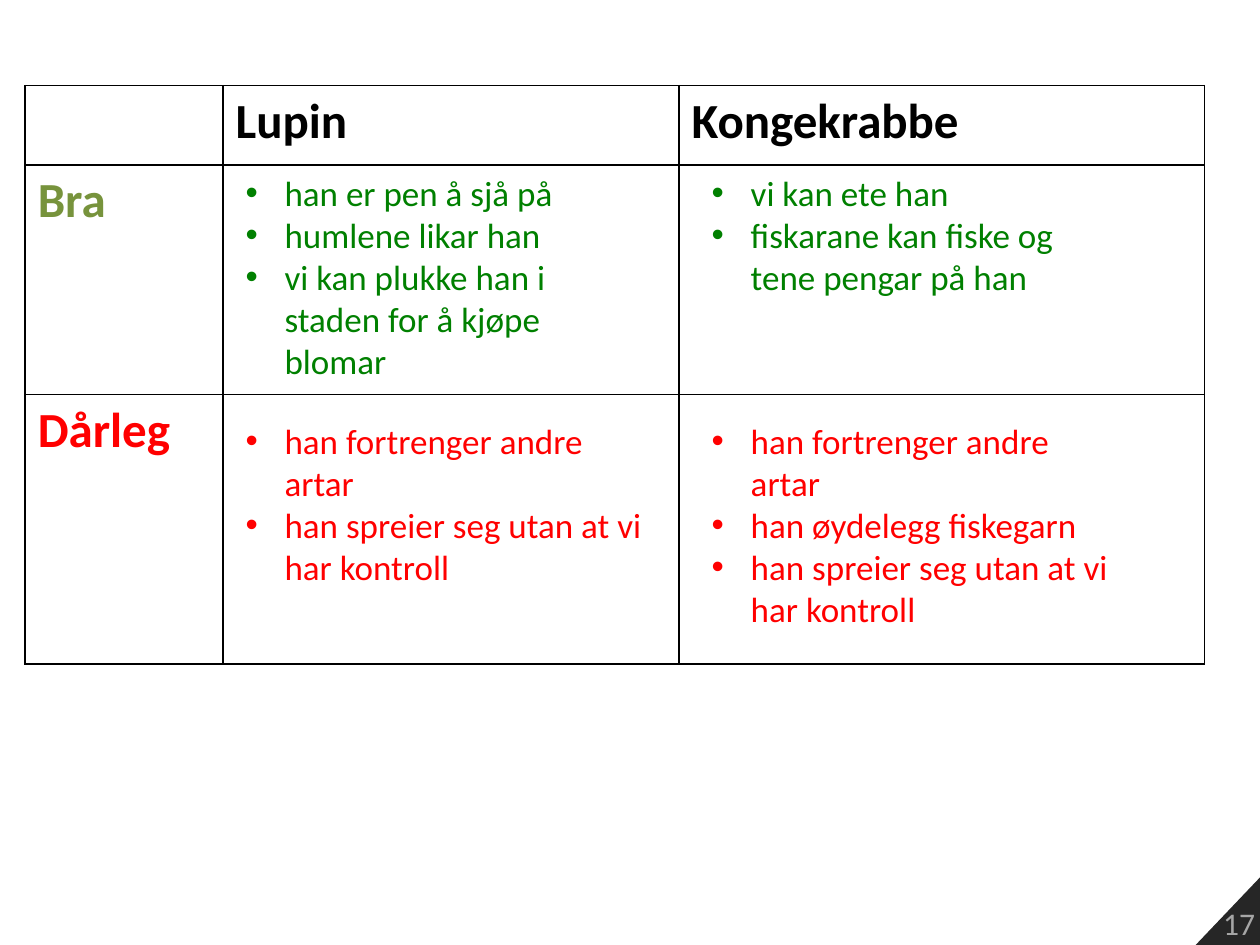
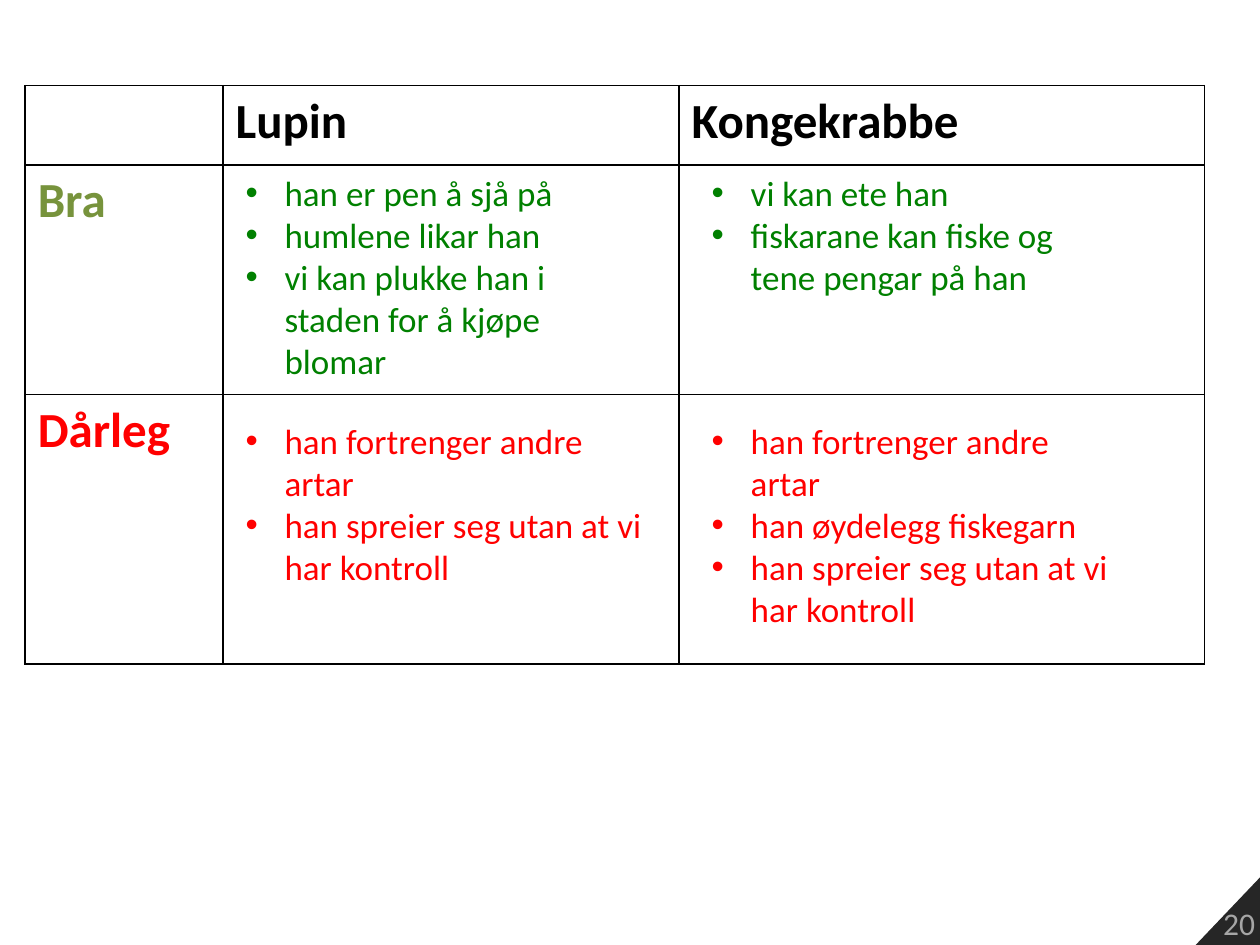
"""Build two slides that weigh the good and bad sides of lupins and king crabs."""
from dataclasses import dataclass

from lxml import etree
from pptx import Presentation
from pptx import util as u
from pptx.dml import color
from pptx.enum import text
from pptx.oxml import ns

FONT = "Calibri"
COLORS = {
    "ink": "000000",
    "bra": "77933C",
    "good": "008000",
    "bad": "FF0000",
    "corner": "262626",
    "number": "A6A6A6",
}
COLUMN_WIDTHS = (1.57, 3.62, 4.17)
ROW_HEIGHTS = (0.63, 1.82, 2.14)
LUPIN_LEFT, KRABBE_LEFT = 1.85, 5.55
BRA_TOP, DARLEG_TOP = 1.31, 3.28
ARGUMENT_WIDTH = 3.39
INDENT = 0.31
PAGE_NUMBERS = ("17", "20")


@dataclass(frozen=True)
class Heading:
    row: int
    column: int
    label: str
    ink: str


@dataclass(frozen=True)
class Arguments:
    left: float
    top: float
    height: float
    ink: str
    points: tuple[str, ...]


HEADINGS = (
    Heading(0, 1, "Lupin", "ink"),
    Heading(0, 2, "Kongekrabbe", "ink"),
    Heading(1, 0, "Bra", "bra"),
    Heading(2, 0, "Dårleg", "bad"),
)
DISPLACES = "han fortrenger andre artar"
SPREADS = "han spreier seg utan at vi har kontroll"
ARGUMENTS = (
    Arguments(LUPIN_LEFT, BRA_TOP, 1.78, "good", (
        "han er pen å sjå på",
        "humlene likar han",
        "vi kan plukke han i staden for å kjøpe blomar",
    )),
    Arguments(KRABBE_LEFT, BRA_TOP, 1.11, "good", (
        "vi kan ete han",
        "fiskarane kan fiske og tene pengar på han",
    )),
    Arguments(LUPIN_LEFT, DARLEG_TOP, 1.45, "bad", (DISPLACES, SPREADS)),
    Arguments(KRABBE_LEFT, DARLEG_TOP, 1.78, "bad",
              (DISPLACES, "han øydelegg fiskegarn", SPREADS)),
)


def rgb(name: str) -> color.RGBColor:
    return color.RGBColor.from_string(COLORS[name])


def add_run(paragraph, wording: str, size: int, ink: str, bold: bool = False) -> None:
    run = paragraph.add_run()
    run.text = wording
    run.font.name = FONT
    run.font.size = u.Pt(size)
    run.font.bold = bold
    run.font.color.rgb = rgb(ink)


def add_bullet(paragraph) -> None:
    properties = paragraph._p.get_or_add_pPr()
    properties.set("marL", str(u.Inches(INDENT)))
    properties.set("indent", str(u.Inches(-INDENT)))
    etree.SubElement(properties, ns.qn("a:buFont"), typeface="Arial")
    etree.SubElement(properties, ns.qn("a:buChar"), char="•")


def add_borders(cell) -> None:
    properties = cell._tc.get_or_add_tcPr()
    for position, side in enumerate(("lnL", "lnR", "lnT", "lnB")):
        border = etree.Element(ns.qn(f"a:{side}"), w=str(u.Pt(1)))
        fill = etree.SubElement(border, ns.qn("a:solidFill"))
        etree.SubElement(fill, ns.qn("a:srgbClr"), val=COLORS["ink"])
        properties.insert(position, border)


def draw_corner(slide, number: str) -> None:
    left, top, right, bottom = map(u.Inches, (9.47, 6.9, 10.06, 7.52))
    builder = slide.shapes.build_freeform(left, bottom)
    builder.add_line_segments([(right, top), (right, bottom)], close=True)
    corner = builder.convert_to_shape()
    corner.shadow.inherit = False
    corner.fill.solid()
    corner.fill.fore_color.rgb = rgb("corner")
    corner.line.fill.background()
    corner.text_frame.vertical_anchor = text.MSO_ANCHOR.BOTTOM
    paragraph = corner.text_frame.paragraphs[0]
    paragraph.alignment = text.PP_ALIGN.RIGHT
    add_run(paragraph, number, 18, "number")


def draw_comparison(slide) -> None:
    comparison = slide.shapes.add_table(
        len(ROW_HEIGHTS), len(COLUMN_WIDTHS), u.Inches(0.2), u.Inches(0.68),
        u.Inches(sum(COLUMN_WIDTHS)), u.Inches(sum(ROW_HEIGHTS))).table
    comparison.first_row = comparison.horz_banding = False
    for column, width in zip(comparison.columns, COLUMN_WIDTHS):
        column.width = u.Inches(width)
    for row, height in zip(comparison.rows, ROW_HEIGHTS):
        row.height = u.Inches(height)
    for cell in comparison.iter_cells():
        cell.fill.background()
        add_borders(cell)
    for heading in HEADINGS:
        cell = comparison.cell(heading.row, heading.column)
        add_run(cell.text_frame.paragraphs[0], heading.label, 28, heading.ink, bold=True)


def draw_arguments(slide, arguments: Arguments) -> None:
    frame = slide.shapes.add_textbox(
        u.Inches(arguments.left), u.Inches(arguments.top),
        u.Inches(ARGUMENT_WIDTH), u.Inches(arguments.height)).text_frame
    frame.word_wrap = True
    frame.auto_size = text.MSO_AUTO_SIZE.SHAPE_TO_FIT_TEXT
    for index, point in enumerate(arguments.points):
        paragraph = frame.add_paragraph() if index else frame.paragraphs[0]
        add_bullet(paragraph)
        add_run(paragraph, point, 20, arguments.ink)


def main() -> None:
    deck = Presentation()
    deck.slide_width, deck.slide_height = u.Inches(10), u.Inches(7.5)
    for number in PAGE_NUMBERS:
        slide = deck.slides.add_slide(deck.slide_layouts[6])
        draw_corner(slide, number)
        draw_comparison(slide)
        for arguments in ARGUMENTS:
            draw_arguments(slide, arguments)
    deck.save("out.pptx")


if __name__ == "__main__":
    main()
